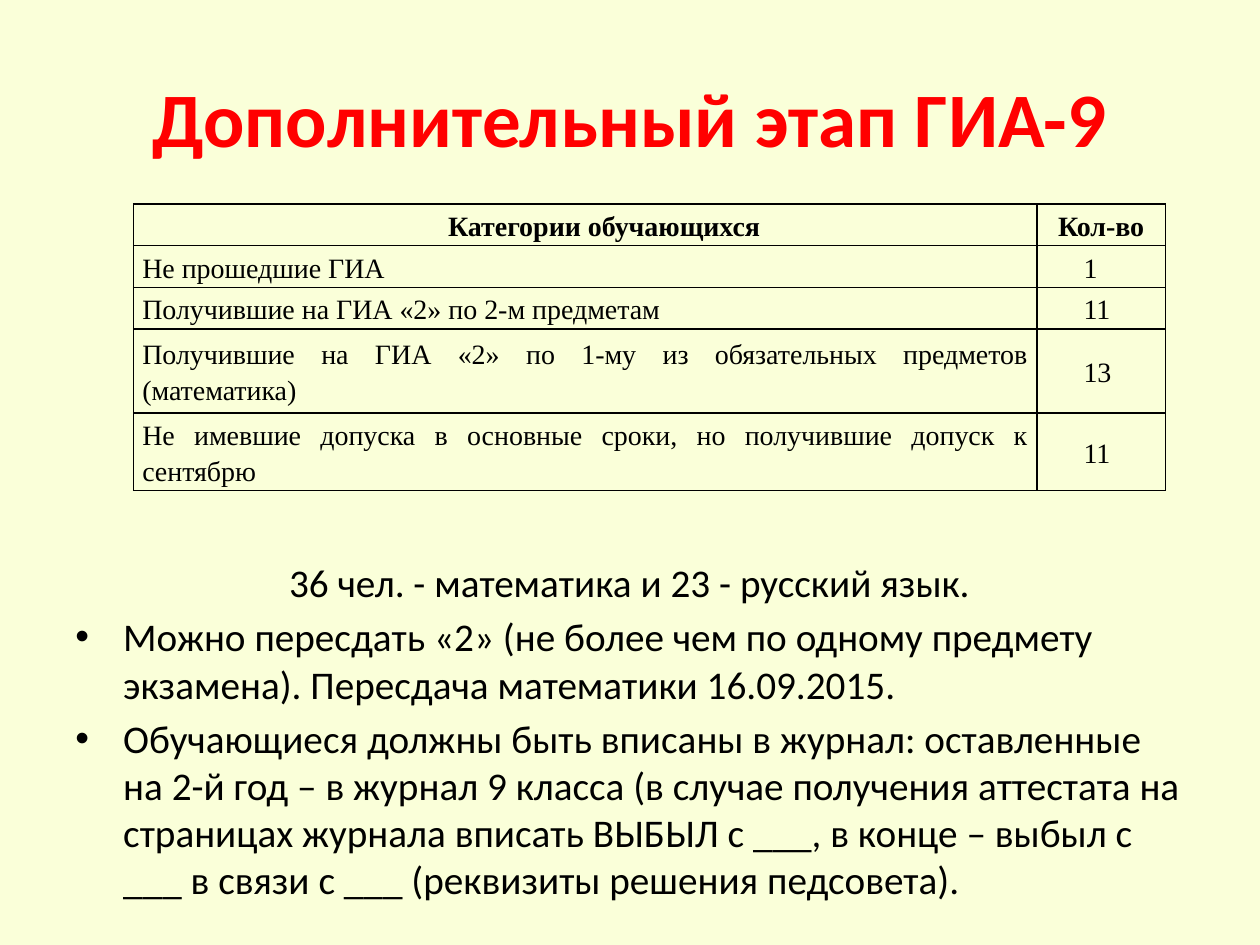
from lxml.etree import SubElement
from pptx import Presentation
from pptx.dml.color import RGBColor
from pptx.enum.text import MSO_ANCHOR as Anchor, PP_ALIGN as Align
from pptx.oxml.ns import qn
from pptx.util import Inches, Pt


def color(hex_value):
    return RGBColor.from_string(hex_value)


def add_run(paragraph, text, font, size, hex_value="000000", bold=False):
    run = paragraph.add_run()
    run.text = text
    run.font.name = font
    run.font.size = Pt(size)
    run.font.bold = bold
    run.font.color.rgb = color(hex_value)


prs = Presentation()
prs.slide_width, prs.slide_height = Inches(10), Inches(7.5)
slide = prs.slides.add_slide(prs.slide_layouts[6])
slide.background.fill.solid()
slide.background.fill.fore_color.rgb = color("FAFFD9")

title = slide.shapes.add_textbox(Inches(0.5), Inches(0.3), Inches(9), Inches(1.25)).text_frame
title.word_wrap = True
title.vertical_anchor = Anchor.MIDDLE
title.paragraphs[0].alignment = Align.CENTER
add_run(title.paragraphs[0], "Дополнительный этап ГИА-9", "Calibri", 44, "FF0000", True)

notes = [
    "36 чел. - математика и 23 - русский язык.",
    "Можно пересдать «2» (не более чем по одному предмету экзамена). "
    "Пересдача математики 16.09.2015.",
    "Обучающиеся должны быть вписаны в журнал: оставленные на 2-й год – в журнал 9 класса "
    "(в случае получения аттестата на страницах журнала вписать ВЫБЫЛ с ___, "
    "в конце – выбыл с ___ в связи с ___ (реквизиты решения педсовета).",
]
body = slide.shapes.add_textbox(Inches(0.5), Inches(4.38), Inches(9), Inches(2.85)).text_frame
body.word_wrap = True
for index, note in enumerate(notes):
    if index == 0:
        paragraph = body.paragraphs[0]
        paragraph.alignment = Align.CENTER
    else:
        paragraph = body.add_paragraph()
        paragraph.space_before = Pt(4.4)
        properties = paragraph._p.get_or_add_pPr()
        properties.set("marL", str(Inches(0.38)))
        properties.set("indent", str(Inches(-0.38)))
        SubElement(properties, qn("a:buFont"), typeface="Arial")
        SubElement(properties, qn("a:buChar"), char="•")
    add_run(paragraph, note, "Calibri", 22.4)

categories = [
    ("Категории обучающихся", "Кол-во"),
    ("Не прошедшие ГИА", "1"),
    ("Получившие на ГИА «2» по 2-м предметам", "11"),
    ("Получившие на ГИА «2» по 1-му из обязательных предметов (математика)", "13"),
    ("Не имевшие допуска в основные сроки, но получившие допуск к сентябрю", "11"),
]
widths = [7.17, 1.02]
heights = [0.33, 0.33, 0.33, 0.67, 0.57]
table = slide.shapes.add_table(
    len(heights), len(widths), Inches(1.06), Inches(1.62),
    Inches(sum(widths)), Inches(sum(heights))).table
table.first_row = table.horz_banding = False
for column, width in zip(table.columns, widths):
    column.width = Inches(width)
for row, height in zip(table.rows, heights):
    row.height = Inches(height)

for r, category in enumerate(categories):
    for c, text in enumerate(category):
        header = r == 0
        cell = table.cell(r, c)
        cell.vertical_anchor = Anchor.MIDDLE
        cell.margin_left = cell.margin_right = Inches(0.07)
        cell.margin_top = cell.margin_bottom = 0
        for side in ("a:lnL", "a:lnR", "a:lnT", "a:lnB"):
            border = SubElement(cell._tc.get_or_add_tcPr(), qn(side), w=str(Pt(1)))
            SubElement(SubElement(border, qn("a:solidFill")), qn("a:srgbClr"), val="000000")
        cell.fill.background()
        paragraph = cell.text_frame.paragraphs[0]
        paragraph.alignment = Align.CENTER if header else Align.JUSTIFY
        paragraph.line_spacing = 1.15
        if header == (c == 0):
            paragraph._p.get_or_add_pPr().set("indent", str(Inches(0.3)))
        add_run(paragraph, text, "Times New Roman", 16, bold=header)

prs.save("out.pptx")
